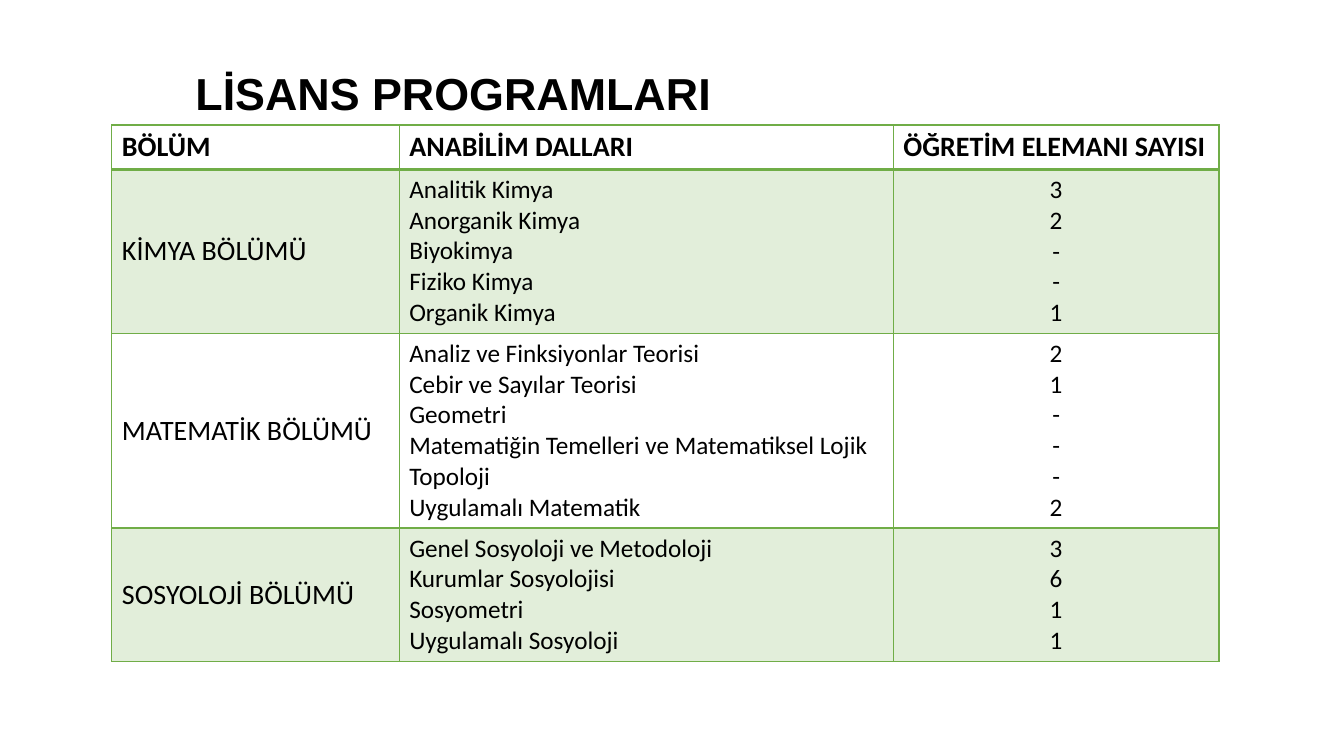
from dataclasses import dataclass

from lxml.etree import SubElement
from pptx import Presentation
from pptx.dml.color import RGBColor
from pptx.enum.text import MSO_ANCHOR, PP_ALIGN
from pptx.oxml.ns import qn
from pptx.slide import Slide
from pptx.table import _Cell
from pptx.util import Inches, Pt


@dataclass(frozen=True)
class Theme:
    ink: str = "000000"
    green: str = "70AD47"
    band_alpha: int = 20
    title_font: str = "Arial"
    table_font: str = "Calibri"
    title_size: int = 32
    label_size: int = 20
    list_size: int = 18
    thin: int = 1
    thick: int = 2


@dataclass(frozen=True)
class Department:
    name: str
    height: float
    branches: dict[str, str]


THEME = Theme()
HEADERS = ["BÖLÜM", "ANABİLİM DALLARI", "ÖĞRETİM ELEMANI SAYISI"]
HEADER_HEIGHT = 0.43
COLUMN_WIDTHS = [2.85, 4.9, 3.23]
DEPARTMENTS = [
    Department("KİMYA BÖLÜMÜ", 1.62, {
        "Analitik Kimya": "3",
        "Anorganik Kimya": "2",
        "Biyokimya": "-",
        "Fiziko Kimya": "-",
        "Organik Kimya": "1",
    }),
    Department("MATEMATİK BÖLÜMÜ", 1.92, {
        "Analiz ve Finksiyonlar Teorisi": "2",
        "Cebir ve Sayılar Teorisi": "1",
        "Geometri": "-",
        "Matematiğin Temelleri ve Matematiksel Lojik": "-",
        "Topoloji": "-",
        "Uygulamalı Matematik": "2",
    }),
    Department("SOSYOLOJİ BÖLÜMÜ", 1.32, {
        "Genel Sosyoloji ve Metodoloji": "3",
        "Kurumlar Sosyolojisi": "6",
        "Sosyometri": "1",
        "Uygulamalı Sosyoloji": "1",
    }),
]


def format_text(tf, font: str, size: int, bold: bool,
                align: PP_ALIGN = PP_ALIGN.LEFT) -> None:
    for p in tf.paragraphs:
        p.alignment = align
        for r in p.runs:
            r.font.name = font
            r.font.size = Pt(size)
            r.font.bold = bold
            r.font.color.rgb = RGBColor.from_string(THEME.ink)


def set_borders(cell: _Cell, top: int, bottom: int) -> None:
    tc_pr = cell._tc.get_or_add_tcPr()
    widths = {"L": THEME.thin, "R": THEME.thin, "T": top, "B": bottom}
    for side, width in widths.items():
        ln = SubElement(tc_pr, qn(f"a:ln{side}"), w=str(Pt(width)))
        fill = SubElement(ln, qn("a:solidFill"))
        SubElement(fill, qn("a:srgbClr"), val=THEME.green)


def set_band(cell: _Cell, banded: bool) -> None:
    if not banded:
        cell.fill.background()
        return
    cell.fill.solid()
    cell.fill.fore_color.rgb = RGBColor.from_string(THEME.green)
    color = cell._tc.tcPr.find(qn("a:solidFill")).find(qn("a:srgbClr"))
    SubElement(color, qn("a:alpha"), val=str(THEME.band_alpha * 1000))


def add_title(s: Slide) -> None:
    sp = s.shapes.add_textbox(Inches(1.84), Inches(0.6), Inches(7.5), Inches(0.64))
    tf = sp.text_frame
    tf.word_wrap = True
    tf.text = "LİSANS PROGRAMLARI"
    format_text(tf, THEME.title_font, THEME.title_size, True)


def add_programme_table(s: Slide) -> None:
    heights = [HEADER_HEIGHT] + [d.height for d in DEPARTMENTS]
    table = s.shapes.add_table(
        len(heights), len(COLUMN_WIDTHS), Inches(1.11), Inches(1.24),
        Inches(sum(COLUMN_WIDTHS)), Inches(sum(heights))).table
    table.first_row = table.horz_banding = False
    for column, width in zip(table.columns, COLUMN_WIDTHS):
        column.width = Inches(width)
    for row, height in zip(table.rows, heights):
        row.height = Inches(height)

    # Header row, then one row per department
    rows = [HEADERS] + [
        [d.name, "\n".join(d.branches), "\n".join(d.branches.values())]
        for d in DEPARTMENTS]
    for i, texts in enumerate(rows):
        header = i == 0
        for j, text in enumerate(texts):
            cell = table.cell(i, j)
            set_borders(cell, THEME.thick if i == 1 else THEME.thin,
                        THEME.thick if header else THEME.thin)
            set_band(cell, i % 2 == 1)
            cell.text_frame.text = text
            if not header and j != 1:
                cell.vertical_anchor = MSO_ANCHOR.MIDDLE
            size = THEME.label_size if header or j == 0 else THEME.list_size
            centred = not header and j == 2
            format_text(cell.text_frame, THEME.table_font, size, header,
                        PP_ALIGN.CENTER if centred else PP_ALIGN.LEFT)


def main() -> None:
    prs = Presentation()
    prs.slide_width, prs.slide_height = Inches(13.33), Inches(7.5)
    s = prs.slides.add_slide(prs.slide_layouts[6])
    add_programme_table(s)
    add_title(s)
    prs.save("out.pptx")


if __name__ == "__main__":
    main()
